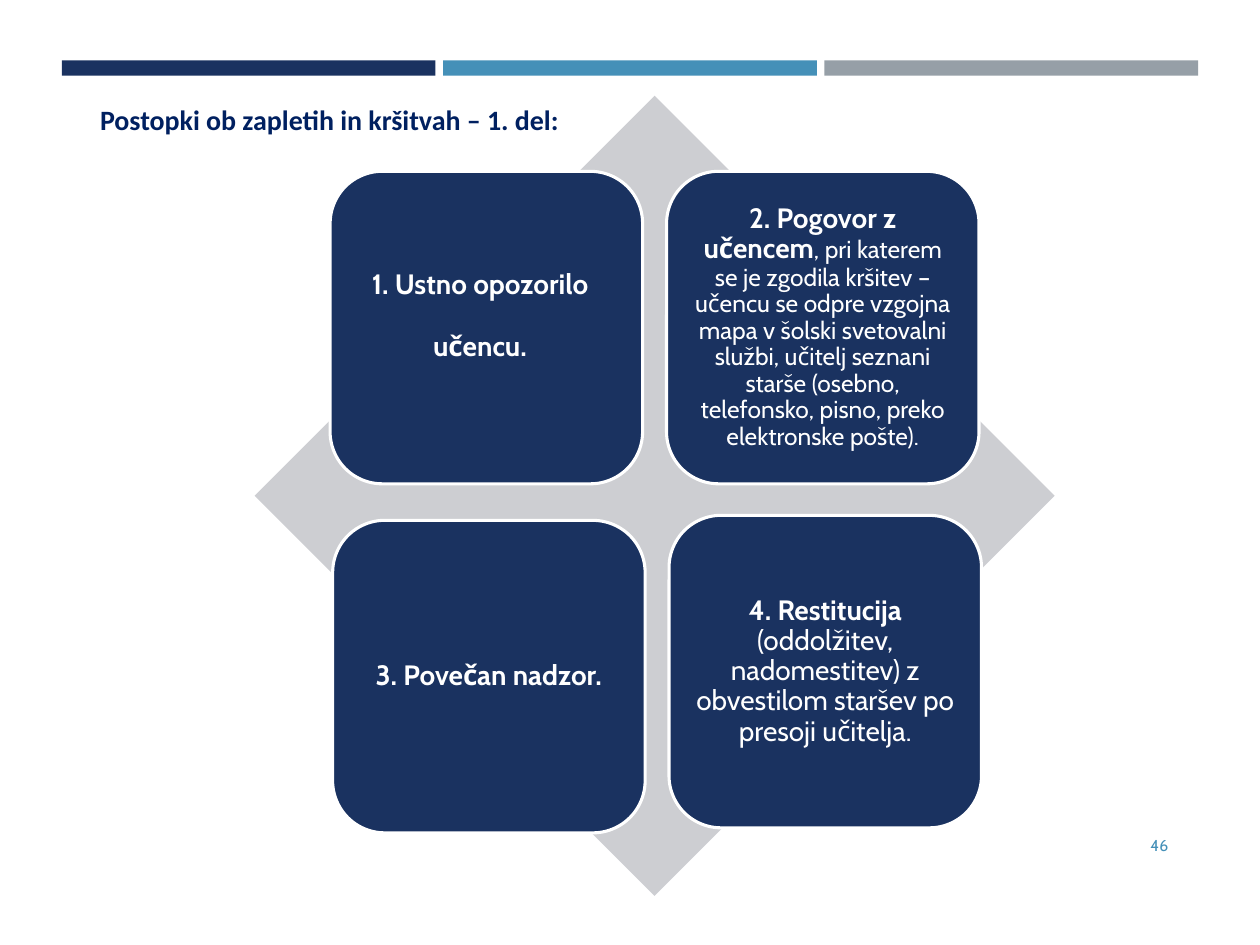
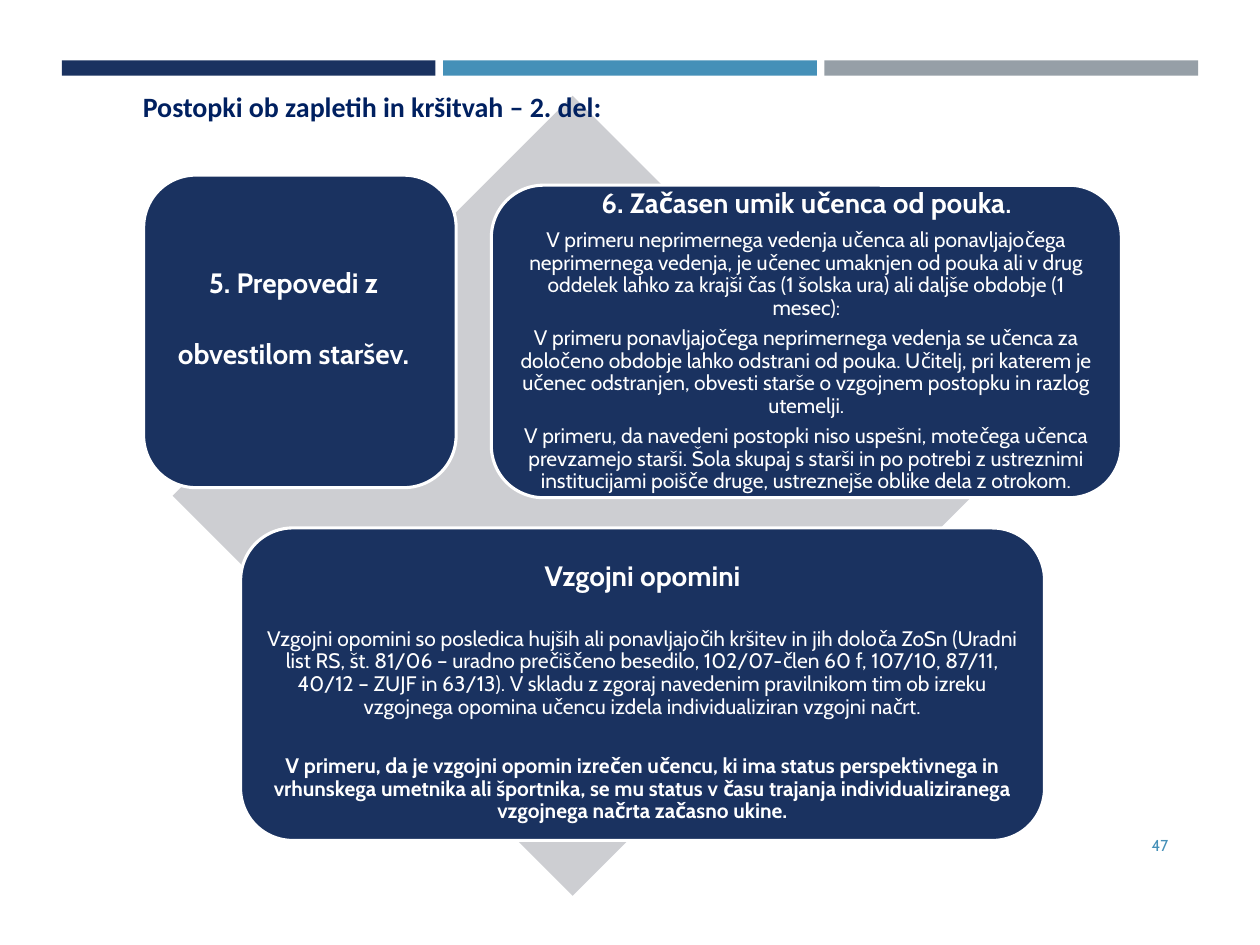
from pptx import Presentation
from pptx import util as u
from pptx.dml.color import RGBColor
from pptx.enum import shapes, text

NAVY = RGBColor(0x1A, 0x32, 0x60)
BLUE = RGBColor(0x45, 0x90, 0xB8)
GREY = RGBColor(0x96, 0x9F, 0xA7)
PALE = RGBColor(0xCD, 0xCE, 0xD2)
TITLE = RGBColor(0x00, 0x20, 0x60)
WHITE = RGBColor(0xFF, 0xFF, 0xFF)

WIDTH, HEIGHT = 10, 7.5
MARGIN, BAND_TOP, BAND_HEIGHT, BAND_GAP = 0.49, 0.48, 0.12, 0.06
DIAMOND_TOP, DIAMOND_SIZE = 0.76, 6.35
CARD = 2.48
INSET = 0.07
HEAD, BODY = 16, 12
SPACE_AFTER = 0.35  # share of the text size

# A paragraph is a list of runs: (text, size, bold).
# A card may set its insets (left, top, right, bottom), an exact line pitch
# in points, or the points left after each paragraph.
SLIDES = [
    {
        "title": "Postopki ob zapletih in kršitvah – 1. del:",
        "title_at": (0.67, 0.76),
        "number": 46,
        "diamond_left": 2.02,
        "cards": [
            {"at": (2.62, 1.36), "insets": (INSET, INSET, 0.17, 0.5), "pitch": 35,
             "text": [[("1. Ustno opozorilo učencu.", HEAD, True)]]},
            {"at": (5.29, 1.36),
             "text": [[("2. Pogovor z učencem", HEAD, True),
                       (", pri katerem se je zgodila kršitev –učencu se odpre vzgojna "
                        "mapa v šolski svetovalni službi, učitelj seznani starše (osebno, "
                        "telefonsko, pisno, preko elektronske pošte).", 14, False)]]},
            {"at": (2.64, 4.13),
             "text": [[("3. Povečan nadzor.", HEAD, True)]]},
            {"at": (5.31, 4.09),
             "text": [[("4. Restitucija ", HEAD, True),
                       ("(oddolžitev, nadomestitev) z obvestilom staršev po presoji "
                        "učitelja.", HEAD, False)]]},
        ],
    },
    {
        "title": "Postopki ob zapletih in kršitvah – 2. del:",
        "title_at": (1.01, 0.66),
        "number": 47,
        "diamond_left": 1.37,
        "cards": [
            {"at": (1.14, 1.39), "insets": (INSET, INSET, 0.17, 0.5), "pitch": 35,
             "text": [[("5. Prepovedi z", HEAD, True)],
                      [("obvestilom staršev.", HEAD, True)]]},
            {"at": (3.9, 1.47), "width": 5,
             "text": [
                 [("6. Začasen umik učenca od pouka", HEAD, True), (".", 14, True)],
                 [("V primeru neprimernega vedenja učenca ali ponavljajočega neprimernega "
                   "vedenja, je učenec umaknjen od pouka ali v drug oddelek lahko za krajši "
                   "čas (1 šolska ura) ali daljše obdobje (1 mesec):", BODY, False)],
                 [("V primeru ponavljajočega neprimernega vedenja se učenca za določeno "
                   "obdobje lahko odstrani od pouka. Učitelj, pri katerem je učenec "
                   "odstranjen, obvesti starše o vzgojnem postopku in razlog utemelji.",
                   BODY, False)],
                 [("V primeru, da navedeni postopki niso uspešni, motečega učenca prevzamejo "
                   "starši. Šola skupaj s starši in po potrebi z ustreznimi institucijami "
                   "poišče druge, ustreznejše oblike dela z otrokom.", BODY, False)],
             ]},
            {"at": (1.91, 4.19), "width": 6.38, "insets": (INSET, 0.14, INSET, 0),
             "after": (20, 21, 0),
             "text": [
                 [("Vzgojni opomini", HEAD, True)],
                 [("Vzgojni opomini so posledica hujših ali ponavljajočih kršitev in jih "
                   "določa ZoSn (Uradni list RS, št. 81/06 – uradno prečiščeno besedilo, "
                   "102/07-člen 60 f, 107/10, 87/11, 40/12 – ZUJF in 63/13). V skladu z "
                   "zgoraj navedenim pravilnikom tim ob izreku vzgojnega opomina učencu "
                   "izdela individualiziran vzgojni načrt.", BODY, False)],
                 [("V primeru, da je vzgojni opomin izrečen učencu, ki ima status "
                   "perspektivnega in vrhunskega umetnika ali športnika, se mu status v času "
                   "trajanja individualiziranega vzgojnega načrta začasno ukine.",
                   BODY, True)],
             ]},
        ],
    },
]


def add_block(s, kind, left, top, width, height, fill):
    sp = s.shapes.add_shape(kind, *map(u.Inches, (left, top, width, height)))
    sp.shadow.inherit = False
    sp.fill.solid()
    sp.fill.fore_color.rgb = fill
    sp.line.fill.background()
    return sp


def style_run(r, font, size, color, bold=False):
    r.font.name = font
    r.font.size = u.Pt(size)
    r.font.bold = bold
    r.font.color.rgb = color


def add_label(s, box, words, align, font, size, color, bold=False, wrap=True):
    """One-line text box, vertically centred."""
    tf = s.shapes.add_textbox(*map(u.Inches, box)).text_frame
    tf.text = words
    tf.word_wrap = wrap
    tf.vertical_anchor = text.MSO_ANCHOR.MIDDLE
    tf.paragraphs[0].alignment = align
    style_run(tf.paragraphs[0].runs[0], font, size, color, bold)


def add_bands(s):
    colors = (NAVY, BLUE, GREY)
    width = (WIDTH - 2 * MARGIN - BAND_GAP * (len(colors) - 1)) / len(colors)
    for i, color in enumerate(colors):
        add_block(s, shapes.MSO_SHAPE.RECTANGLE, MARGIN + i * (width + BAND_GAP),
                  BAND_TOP, width, BAND_HEIGHT, color)


def add_card(s, card):
    sp = add_block(s, shapes.MSO_SHAPE.ROUNDED_RECTANGLE, *card["at"],
                   card.get("width", CARD), CARD, NAVY)
    sp.line.color.rgb = WHITE
    sp.line.width = u.Pt(1.75)
    tf = sp.text_frame
    tf.word_wrap = True
    tf.vertical_anchor = text.MSO_ANCHOR.MIDDLE
    insets = card.get("insets", (INSET,) * 4)
    tf.margin_left, tf.margin_top, tf.margin_right, tf.margin_bottom = map(u.Inches, insets)
    for i, runs in enumerate(card["text"]):
        p = tf.add_paragraph() if i else tf.paragraphs[0]
        p.alignment = text.PP_ALIGN.CENTER
        p.line_spacing = u.Pt(card["pitch"]) if "pitch" in card else 0.9
        after = card["after"][i] if "after" in card else SPACE_AFTER * runs[0][1]
        p.space_after = u.Pt(after)
        for words, size, bold in runs:
            r = p.add_run()
            r.text = words
            style_run(r, "Cabin", size, WHITE, bold)


def add_slide(prs, content):
    s = prs.slides.add_slide(prs.slide_layouts[6])
    add_bands(s)
    add_label(s, (8.53, 6.51, 0.84, 0.4), str(content["number"]),
              text.PP_ALIGN.RIGHT, "Cabin", 9, BLUE)
    add_block(s, shapes.MSO_SHAPE.DIAMOND, content["diamond_left"], DIAMOND_TOP,
              DIAMOND_SIZE, DIAMOND_SIZE, PALE)
    for card in content["cards"]:
        add_card(s, card)
    add_label(s, (*content["title_at"], 3.89, 0.37), content["title"],
              text.PP_ALIGN.CENTER, "Calibri", 16, TITLE, bold=True, wrap=False)


def main():
    prs = Presentation()
    prs.slide_width, prs.slide_height = u.Inches(WIDTH), u.Inches(HEIGHT)
    for content in SLIDES:
        add_slide(prs, content)
    prs.save("out.pptx")


if __name__ == "__main__":
    main()
